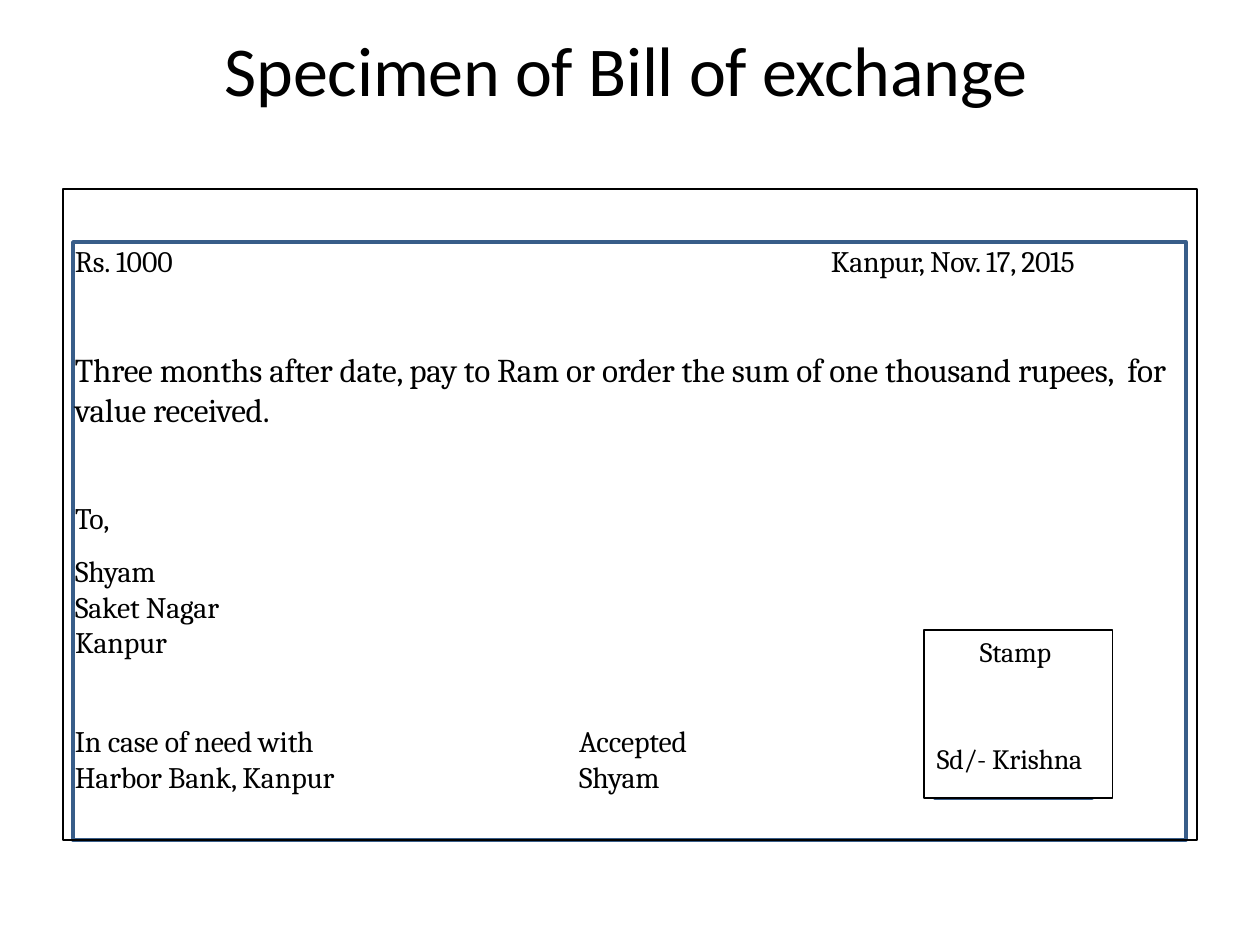
from dataclasses import dataclass

from pptx import Presentation, util as u
from pptx.dml.color import RGBColor
from pptx.enum import shapes, text

SCALE = 914400 // 126  # EMU in one px
COLORS = {"ink": "000000", "blue": "385D89", "paper": "FFFFFF"}


@dataclass
class Frame:
    x: int
    y: int
    w: int
    h: int
    line: str
    weight: float
    fill: str = ""


@dataclass
class Line:
    text: str
    before: float = 0
    spacing: float = 1
    indent: int = 1


@dataclass
class Note:
    x: int
    y: int
    w: int
    h: int
    size: int
    lines: list[Line]
    font: str = "Cambria"
    tracking: int = -10  # hundredths of a point


def px(n: int) -> int:
    return u.Emu(n * SCALE)


def rgb(name: str) -> RGBColor:
    return RGBColor.from_string(COLORS[name])


def draw_frame(s, f: Frame) -> None:
    sp = s.shapes.add_shape(shapes.MSO_SHAPE.RECTANGLE, px(f.x), px(f.y), px(f.w), px(f.h))
    sp.shadow.inherit = False
    if f.fill:
        sp.fill.solid()
        sp.fill.fore_color.rgb = rgb(f.fill)
    else:
        sp.fill.background()
    sp.line.color.rgb = rgb(f.line)
    sp.line.width = u.Pt(f.weight)


def draw_note(s, n: Note) -> None:
    tf = s.shapes.add_textbox(px(n.x), px(n.y), px(n.w), px(n.h)).text_frame
    tf.word_wrap = True
    tf.vertical_anchor = text.MSO_ANCHOR.TOP
    tf.margin_left = tf.margin_right = tf.margin_bottom = 0
    tf.margin_top = px(1)
    tf.text = "\n".join(line.text for line in n.lines)
    for p, line in zip(tf.paragraphs, n.lines):
        p.space_before = u.Pt(line.before)
        p.line_spacing = line.spacing
        p._p.get_or_add_pPr().set("marL", str(px(line.indent)))
        for r in p.runs:
            r.font.name = n.font
            r.font.size = u.Pt(n.size)
            r.font.color.rgb = rgb("ink")
            r._r.get_or_add_rPr().set("spc", str(n.tracking))


# Bill border, and the stamp box over its blue frame
FRAMES = [
    Frame(73, 242, 1113, 598, "blue", 2.04),
    Frame(63, 189, 1134, 651, "ink", 0.72),
    Frame(935, 640, 157, 158, "blue", 2.04),
    Frame(924, 630, 189, 168, "ink", 0.72, "paper"),
]

LEFT = 74
NOTES = [
    # Title
    Note(224, 26, 830, 87, 40, [Line("Specimen of Bill of exchange", 0.9)], "Calibri", -13),
    # Amount, place and date
    Note(LEFT, 242, 113, 39, 17, [Line("Rs. 1000", 1.1)], tracking=-5),
    Note(830, 242, 281, 39, 17, [Line("Kanpur, Nov. 17, 2015", 1.1)], tracking=-20),
    # Order to pay
    Note(LEFT, 348, 1109, 83, 19, [Line(
        "Three months after date, pay to Ram or order the sum of one thousand rupees,  for value received.",
        0.9)]),
    # Drawee
    Note(LEFT, 481, 155, 181, 17, [
        Line("To,", 1, 1.49), Line("Shyam", 0, 1.49), Line("Saket Nagar"), Line("Kanpur")]),
    # Referee in case of need, and acceptance
    Note(LEFT, 722, 290, 76, 17, [Line("In case of need with", 1), Line("Harbor Bank, Kanpur")]),
    Note(578, 722, 120, 76, 17, [Line("Accepted", 1), Line("Shyam")]),
    # Stamp and signature
    Note(925, 634, 188, 139, 16, [
        Line("Stamp", 0.9, indent=55), Line("Sd/- Krishna", 41.5, indent=12)]),
]


def main() -> None:
    prs = Presentation()
    prs.slide_width, prs.slide_height = px(1260), px(945)
    s = prs.slides.add_slide(prs.slide_layouts[6])
    for f in FRAMES:
        draw_frame(s, f)
    for n in NOTES:
        draw_note(s, n)
    prs.save("out.pptx")


if __name__ == "__main__":
    main()
